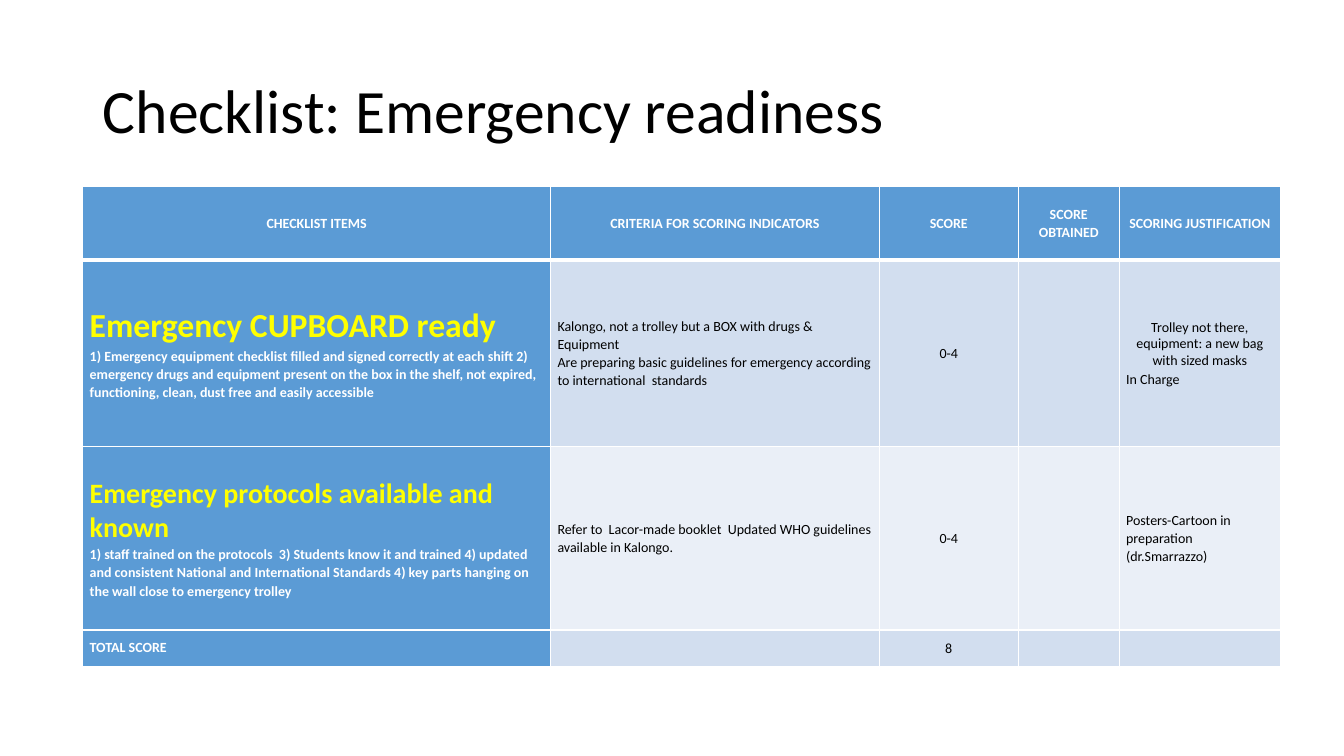
"""Build the emergency readiness checklist slide."""
from dataclasses import dataclass

from lxml import etree
from pptx import Presentation
from pptx.dml.color import RGBColor
from pptx.enum.text import MSO_ANCHOR, MSO_AUTO_SIZE, PP_ALIGN
from pptx.oxml.ns import qn
from pptx.util import Emu, Pt

LEFT, CENTER = PP_ALIGN.LEFT, PP_ALIGN.CENTER
MIDDLE = MSO_ANCHOR.MIDDLE
NO_AUTOFIT = MSO_AUTO_SIZE.NONE
TITLE_ONLY = 5
EMU_PER_PX = 9144
FONT = "Calibri"
COLORS = {
    "black": "000000",
    "white": "FFFFFF",
    "yellow": "FFFF00",
    "blue": "5B9BD5",
    "band_dark": "D2DEEF",
    "band_light": "EAEFF7",
}
COLUMN_WIDTHS = (464, 326, 138, 100, 160)
ROW_HEIGHTS = (73, 185, 182, 36)
THIN, THICK = 1, 3


@dataclass(frozen=True)
class Line:
    """One paragraph of text with its look."""

    text: str
    align: PP_ALIGN = LEFT
    size: int = 10
    color: str = "black"
    bold: bool = False
    spacing: float = 1.07


def header(text: str, spacing: float = 1.07) -> list[Line]:
    """Return the content of a column heading."""
    return [Line(text, CENTER, color="white", bold=True, spacing=spacing)]


def item(title: str, size: int, details: str) -> list[Line]:
    """Return the content of a checklist item."""
    return [
        Line(title, size=size, color="yellow", bold=True, spacing=1.0),
        Line(details, color="white", bold=True),
    ]


ROWS: list[list[list[Line]]] = [
    [
        header("CHECKLIST ITEMS", 1.0),
        header("CRITERIA FOR SCORING INDICATORS"),
        header("SCORE"),
        header("SCORE OBTAINED"),
        header("SCORING JUSTIFICATION", 1.0),
    ],
    [
        item(
            "Emergency CUPBOARD ready",
            24,
            "1) Emergency equipment checklist filled and signed correctly at each shift "
            "2) emergency drugs and equipment present on the box in the shelf, not expired, "
            "functioning, clean, dust free and easily accessible",
        ),
        [
            Line("Kalongo, not a trolley but a BOX with drugs & Equipment"),
            Line("Are preparing basic guidelines for emergency according to international  standards"),
        ],
        [Line("0-4", CENTER)],
        [],
        [
            Line("Trolley not there, equipment: a new bag with sized masks", CENTER, spacing=1.0),
            Line("In Charge"),
        ],
    ],
    [
        item(
            "Emergency protocols available and known",
            20,
            "1) staff trained on the protocols  3) Students know it and trained "
            "4) updated and consistent National and International Standards "
            "4) key parts hanging on the wall close to emergency trolley",
        ),
        [Line("Refer to  Lacor-made booklet  Updated WHO guidelines available in Kalongo.")],
        [Line("0-4", CENTER)],
        [],
        [Line("Posters-Cartoon in preparation (dr.Smarrazzo)")],
    ],
    [
        [Line("TOTAL SCORE", color="white", bold=True, spacing=1.0)],
        [],
        [Line("8", CENTER)],
        [],
        [],
    ],
]


def px(value: int) -> Emu:
    """Turn px into EMU."""
    return Emu(value * EMU_PER_PX)


def rgb(name: str) -> RGBColor:
    """Look up a named colour."""
    return RGBColor.from_string(COLORS[name])


def write(frame, lines: list[Line]) -> None:
    """Write lines into a text frame, one paragraph each."""
    for index, line in enumerate(lines):
        para = frame.add_paragraph() if index else frame.paragraphs[0]
        para.alignment = line.align
        para.line_spacing = line.spacing
        span = para.add_run()
        span.text = line.text
        span.font.name = FONT
        span.font.size = Pt(line.size)
        span.font.bold = line.bold
        span.font.color.rgb = rgb(line.color)


def add_borders(cell, top: int, bottom: int) -> None:
    """Draw white borders round a cell, with widths in points."""
    properties = cell._tc.get_or_add_tcPr()
    widths = {"a:lnL": THIN, "a:lnR": THIN, "a:lnT": top, "a:lnB": bottom}
    for tag, width in widths.items():
        border = etree.SubElement(properties, qn(tag), w=str(Pt(width)))
        fill = etree.SubElement(border, qn("a:solidFill"))
        etree.SubElement(fill, qn("a:srgbClr"), val=COLORS["white"])


def fill_name(row: int, column: int) -> str:
    """Choose the fill of a cell from its place."""
    if row == 0 or column == 0:
        return "blue"
    return "band_dark" if row % 2 else "band_light"


def add_title(page) -> None:
    """Place and format the title."""
    title = page.shapes.title
    title.left, title.top, title.width, title.height = map(px, (92, 40, 1150, 145))
    frame = title.text_frame
    frame.auto_size = NO_AUTOFIT
    frame.vertical_anchor = MIDDLE
    write(frame, [Line("Checklist: Emergency readiness", size=44, spacing=0.9)])


def add_checklist(page) -> None:
    """Add the checklist table."""
    table = page.shapes.add_table(
        len(ROWS), len(COLUMN_WIDTHS), px(82), px(185),
        px(sum(COLUMN_WIDTHS)), px(sum(ROW_HEIGHTS)),
    ).table
    table.first_col = True
    for column, width in zip(table.columns, COLUMN_WIDTHS):
        column.width = px(width)
    for row, height in zip(table.rows, ROW_HEIGHTS):
        row.height = px(height)
    for row_index, contents in enumerate(ROWS):
        for column_index, lines in enumerate(contents):
            cell = table.cell(row_index, column_index)
            cell.margin_left = cell.margin_right = px(7)
            cell.margin_top = cell.margin_bottom = px(0)
            cell.vertical_anchor = MIDDLE
            add_borders(
                cell,
                top=THICK if row_index == 1 else THIN,
                bottom=THICK if row_index == 0 else THIN,
            )
            cell.fill.solid()
            cell.fill.fore_color.rgb = rgb(fill_name(row_index, column_index))
            write(cell.text_frame, lines)


def main() -> None:
    """Build and save the deck."""
    deck = Presentation()
    deck.slide_width, deck.slide_height = px(1333), px(750)
    page = deck.slides.add_slide(deck.slide_layouts[TITLE_ONLY])
    add_title(page)
    add_checklist(page)
    deck.save("out.pptx")


if __name__ == "__main__":
    main()
